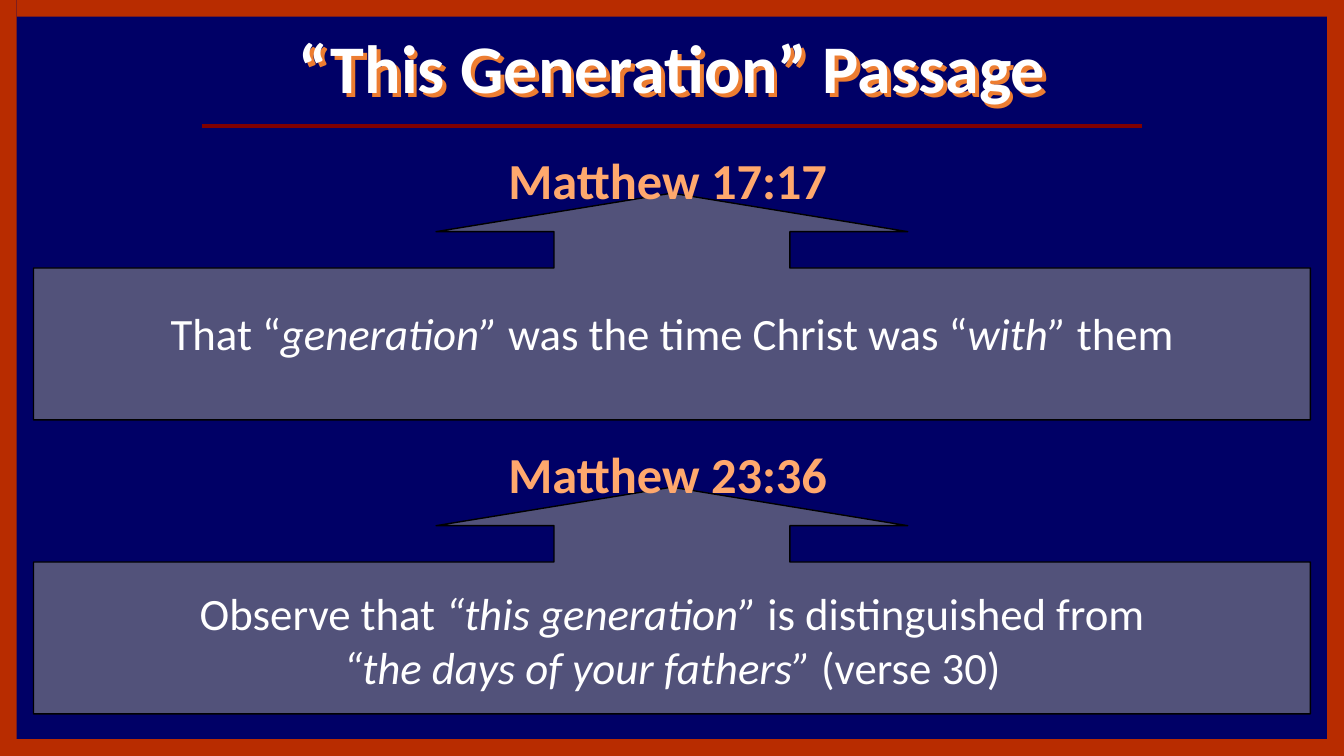
"""Build the "This Generation" slide on a grid of 80 columns and 45 rows."""
import pptx
import pptx.dml.color
import pptx.enum.shapes
import pptx.enum.text
import pptx.oxml
import pptx.oxml.ns
import pptx.util

SHAPES = pptx.enum.shapes.MSO_SHAPE
ANCHORS = pptx.enum.text.MSO_ANCHOR

presentation = pptx.Presentation()
presentation.slide_width = pptx.util.Inches(10)
presentation.slide_height = pptx.util.Inches(5.625)
CELL = presentation.slide_width // 80


def paint(color_format, hex_color):
    """Set a fill, line fill or font fill to one solid colour."""
    color_format.solid()
    color_format.fore_color.rgb = pptx.dml.color.RGBColor.from_string(hex_color)


def write(shape, text, size=24, color="FFFFFF", bold=False, wrap=True, anchor=ANCHORS.TOP):
    """Write centred text, with italics between asterisks and line breaks at newlines."""
    frame = shape.text_frame
    frame.word_wrap = wrap
    frame.auto_size = pptx.enum.text.MSO_AUTO_SIZE.NONE
    frame.vertical_anchor = anchor
    paragraph = frame.paragraphs[0]
    paragraph.alignment = pptx.enum.text.PP_ALIGN.CENTER
    for index, part in enumerate(text.split("*")):
        for line_number, line in enumerate(part.split("\n")):
            if line_number:
                paragraph.add_line_break()
            if line:
                run = paragraph.add_run()
                run.text = line
                run.font.name = "Calibri"
                run.font.size = pptx.util.Pt(size)
                run.font.bold = bold
                run.font.italic = index % 2 == 1
                paint(run.font.fill, color)
    return paragraph


slide = presentation.slides.add_slide(presentation.slide_layouts[5])
paint(slide.background.fill, "000066")

title = slide.shapes.title
title.left, title.top, title.width, title.height = [
    round(CELL * cells) for cells in (11.5, 1.5, 57, 5.5)]
paragraph = write(title, "“This Generation” Passage", size=36.5, bold=True, anchor=ANCHORS.MIDDLE)
paragraph.line_spacing = 0.9
title._element.spPr.append(pptx.oxml.parse_xml(
    f'<a:effectLst {pptx.oxml.ns.nsdecls("a")}>'
    '<a:outerShdw dist="35921" dir="2700000" algn="ctr" rotWithShape="0">'
    '<a:srgbClr val="ED7D31"/></a:outerShdw></a:effectLst>'))

rule = slide.shapes.add_connector(
    pptx.enum.shapes.MSO_CONNECTOR.STRAIGHT,
    CELL * 12, round(CELL * 7.5), CELL * 68, round(CELL * 7.5))
paint(rule.line.fill, "800000")
rule.line.width = pptx.util.Pt(2)
rule._element.spPr.append(pptx.oxml.parse_xml(
    f'<a:effectLst {pptx.oxml.ns.nsdecls("a")}/>'))

passages = [
    ("Matthew 17:17", "That “*generation”* was the time Christ was “*with”* them", 17.8, 4),
    ("Matthew 23:36", "Observe that *“this generation”* is distinguished from\n"
     "*“the days of your fathers”* (verse 30)", 34.5, 7.3),
]
for index, (reference, remark, remark_row, remark_rows) in enumerate(passages):
    row = 8.5 + 17.5 * index
    callout = slide.shapes.add_shape(
        SHAPES.UP_ARROW_CALLOUT, CELL * 2, round(CELL * (row + 3)), CELL * 76, round(CELL * 13.5))
    callout.shadow.inherit = False
    for position, share in enumerate((1.04, 1.04, 0.17, 0.67)):
        callout.adjustments[position] = share
    paint(callout.fill, "52527A")
    paint(callout.line.fill, "000000")
    callout.line.width = pptx.util.Pt(0.75)

    heading = slide.shapes.add_textbox(
        round(CELL * 26.5), round(CELL * row), round(CELL * 26.5), round(CELL * 2.5))
    write(heading, reference, size=27, color="FFA86D", bold=True, wrap=False)

    body = slide.shapes.add_textbox(
        round(CELL * 2.67), round(CELL * remark_row),
        round(CELL * 74.67), round(CELL * remark_rows))
    write(body, remark)

for left, top, width, height in [
        (0, 0, 1, 45), (79, 0, 1, 45), (1, 0, 78.3, 1), (0, 44, 79.3, 1)]:
    border = slide.shapes.add_shape(
        SHAPES.RECTANGLE, CELL * left, CELL * top, round(CELL * width), round(CELL * height))
    border.shadow.inherit = False
    paint(border.fill, "B82C00")
    border.line.fill.background()

presentation.save("out.pptx")
